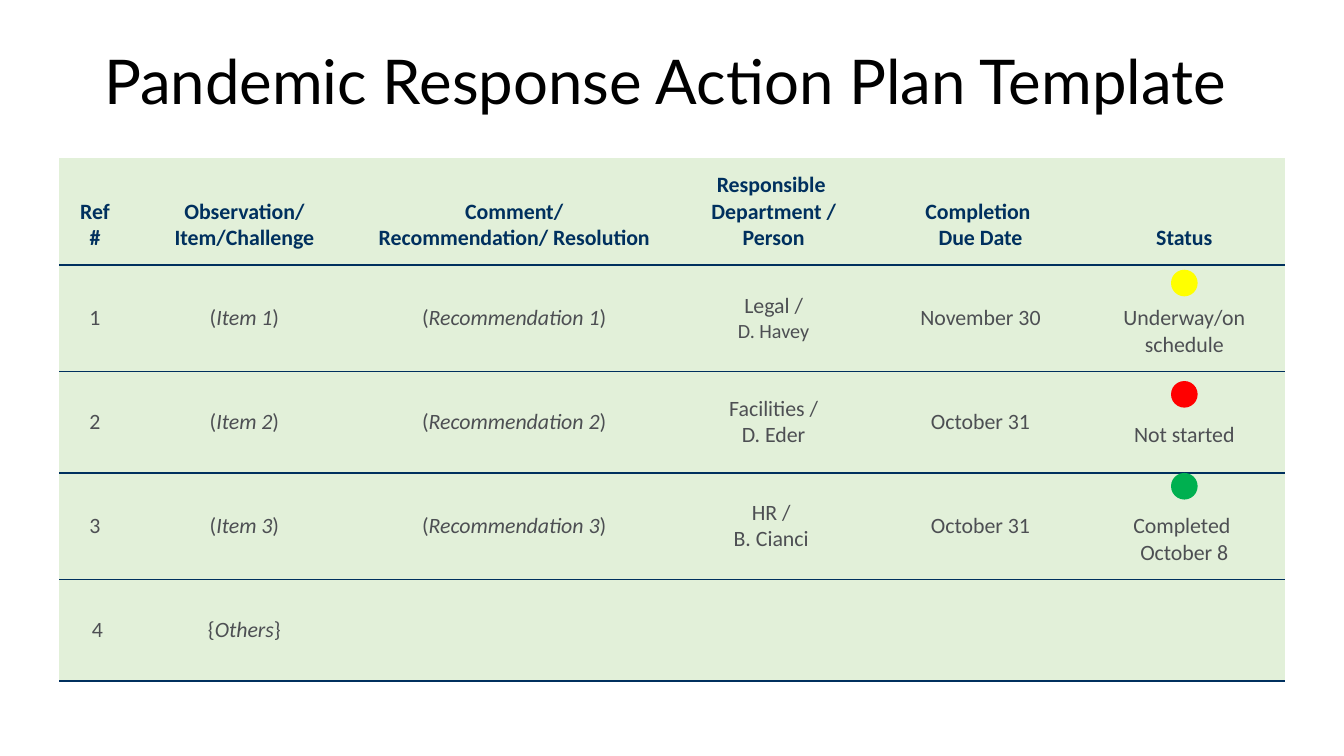
from lxml import etree
from pptx import Presentation
from pptx.dml.color import RGBColor
from pptx.enum import shapes, text
from pptx.oxml import ns
from pptx.util import Inches, Pt

BLACK = RGBColor(0x00, 0x00, 0x00)
NAVY = RGBColor(0x00, 0x30, 0x5E)
GREY = RGBColor(0x4D, 0x4F, 0x53)
MINT = RGBColor(0xE2, 0xF0, 0xD9)
YELLOW = RGBColor(0xFF, 0xFF, 0x00)
RED = RGBColor(0xFF, 0x00, 0x00)
GREEN = RGBColor(0x00, 0xB0, 0x50)

PLAIN = "{2D5ABB26-0587-4C30-8999-92F81FD0307C}"
WIDTHS = [0.59, 1.88, 2.58, 1.71, 1.71, 1.66]
HEIGHTS = [0.88, 0.88, 0.84, 0.88, 0.84]
STATUS = 5
DOT = 0.22
DOTS = [(0.92, YELLOW), (1.84, RED), (2.6, GREEN)]

# Each cell is a list of lines; underscores enclose italic words.
HEAD = [["Ref #"], ["Observation/", "Item/Challenge"],
        ["Comment/", "Recommendation/ Resolution"],
        ["Responsible ", "Department /", "Person"],
        ["Completion ", "Due Date"], ["Status"]]
TASKS = [
    (["Legal /", "D. Havey"], "November 30", ["Underway/on schedule"]),
    (["Facilities /", "D. Eder"], "October 31", ["Not started"]),
    (["HR / ", "B. Cianci "], "October 31", ["Completed ", "October 8"]),
]
SMALL = {"D. Havey": 12}


def rows():
    """Return the header, the numbered tasks and the open last row."""
    body = [[[str(n)], [f"(_Item {n}_)"], [f"(_Recommendation {n}_)"],
             owner, [due], state]
            for n, (owner, due, state) in enumerate(TASKS, 1)]
    return [HEAD, *body, [[" 4"], ["{_Others_}"], [], [], [], []]]


def rule(cell):
    """Draw the navy line under a cell."""
    props = cell._tc.get_or_add_tcPr()
    line = etree.Element(ns.qn("a:lnB"), w=str(Pt(1)))
    fill = etree.SubElement(line, ns.qn("a:solidFill"))
    etree.SubElement(fill, ns.qn("a:srgbClr"), val=str(NAVY))
    props.insert(0, line)


def write(cell, lines, head):
    frame = cell.text_frame
    for i, line in enumerate(lines):
        para = frame.paragraphs[0] if i == 0 else frame.add_paragraph()
        para.alignment = text.PP_ALIGN.CENTER
        for j, part in enumerate(line.split("_")):
            run = para.add_run()
            run.text = part
            font = run.font
            font.name = "Calibri"
            font.size = Pt(SMALL.get(line, 13))
            font.bold = head
            font.italic = j % 2 == 1
            font.color.rgb = NAVY if head else GREY


def add_title(slide, left, top, width, height):
    title = slide.shapes.title
    title.left, title.top = Inches(left), Inches(top)
    title.width, title.height = Inches(width), Inches(height)
    frame = title.text_frame
    frame.auto_size = text.MSO_AUTO_SIZE.NONE
    frame.vertical_anchor = text.MSO_ANCHOR.MIDDLE
    para = frame.paragraphs[0]
    para.alignment = text.PP_ALIGN.LEFT
    para.line_spacing = 0.9
    run = para.add_run()
    run.text = "Pandemic Response Action Plan Template"
    run.font.name = "Lato"
    run.font.size = Pt(36.7)
    run.font.color.rgb = BLACK


def add_plan(slide, left, top):
    data = rows()
    frame = slide.shapes.add_table(
        len(data), len(WIDTHS), Inches(left), Inches(top),
        Inches(sum(WIDTHS)), Inches(sum(HEIGHTS)))
    table = frame.table
    table.first_row = table.horz_banding = False
    table._tbl.tblPr.find(ns.qn("a:tableStyleId")).text = PLAIN
    for col, width in zip(table.columns, WIDTHS):
        col.width = Inches(width)
    for r, line in enumerate(data):
        table.rows[r].height = Inches(HEIGHTS[r])
        for c, lines in enumerate(line):
            cell = table.cell(r, c)
            cell.fill.solid()
            cell.fill.fore_color.rgb = MINT
            head = r == 0
            cell.vertical_anchor = (text.MSO_ANCHOR.BOTTOM if head
                                    else text.MSO_ANCHOR.MIDDLE)
            cell.margin_left = cell.margin_right = Inches(0.11)
            cell.margin_top = cell.margin_bottom = Inches(0.11)
            if c == STATUS and lines and not head:
                cell.margin_top = Inches(0.11 + DOT)
            write(cell, lines, head)
            rule(cell)


def add_dots(slide, left, top):
    """Place the status lights in the status column of the table."""
    mid = left + sum(WIDTHS[:STATUS]) + WIDTHS[STATUS] / 2
    for drop, color in DOTS:
        dot = slide.shapes.add_shape(
            shapes.MSO_SHAPE.OVAL, Inches(mid - DOT / 2), Inches(top + drop),
            Inches(DOT), Inches(DOT))
        dot.shadow.inherit = False
        dot.fill.solid()
        dot.fill.fore_color.rgb = color
        dot.line.fill.background()


def main():
    deck = Presentation()
    deck.slide_width, deck.slide_height = Inches(11.11), Inches(6.25)
    slide = deck.slides.add_slide(deck.slide_layouts[5])
    add_title(slide, 0.76, 0.33, 9.58, 0.74)
    add_plan(slide, 0.49, 1.31)
    add_dots(slide, 0.49, 1.31)
    deck.save("out.pptx")


if __name__ == "__main__":
    main()
